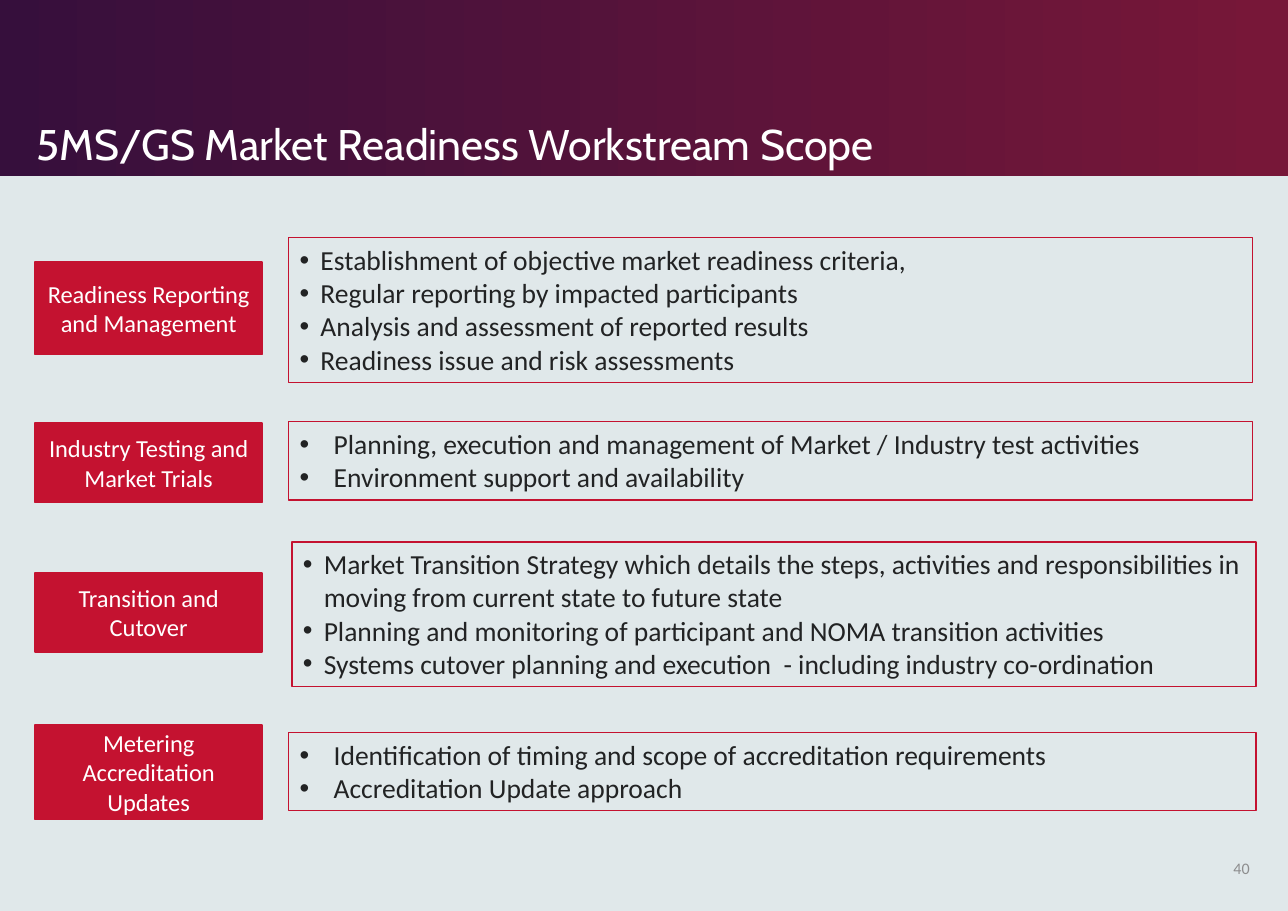
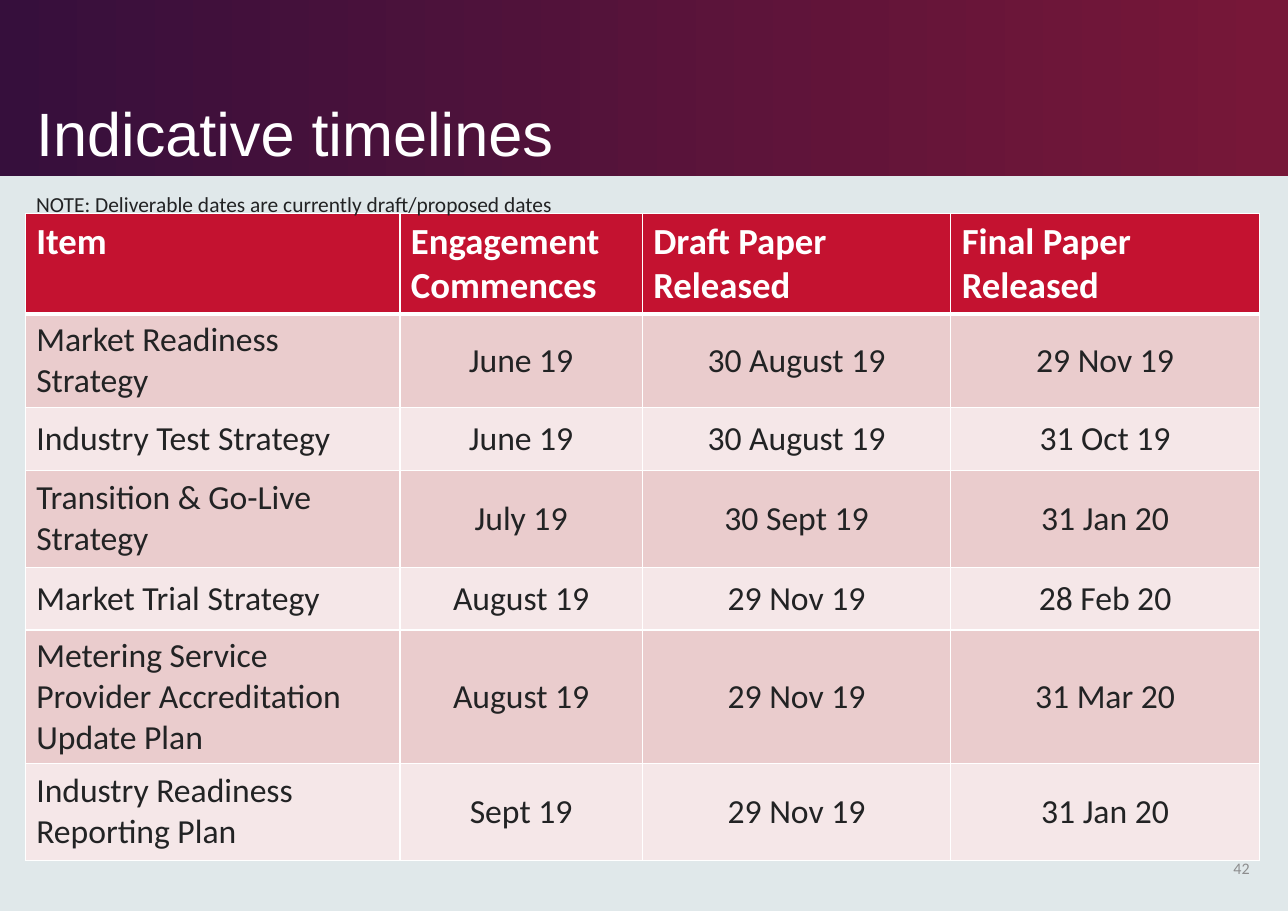
from lxml import etree
from pptx import Presentation
from pptx.dml.color import RGBColor
from pptx.enum.shapes import MSO_SHAPE
from pptx.enum.text import MSO_ANCHOR, PP_ALIGN
from pptx.oxml.ns import qn
from pptx.util import Inches, Pt

RECTANGLE = MSO_SHAPE.RECTANGLE
TOP, MIDDLE, BOTTOM = MSO_ANCHOR.TOP, MSO_ANCHOR.MIDDLE, MSO_ANCHOR.BOTTOM
LEFT, CENTER, RIGHT = PP_ALIGN.LEFT, PP_ALIGN.CENTER, PP_ALIGN.RIGHT

COLORS = {
    "page": "E0E8EA",
    "band_start": "360F3C",
    "band_end": "771738",
    "red": "C41230",
    "ink": "222324",
    "white": "FFFFFF",
    "number": "8D8D8E",
    "row_dark": "EACCCD",
    "row_light": "F5E7E8",
}
BODY_FONT = "Calibri"
SLIDE_W, SLIDE_H = 11.69, 8.27
BAND_H = 1.6

LABEL_LEFT, LABEL_W = 0.32, 2.06
NARROW_INDENT, WIDE_INDENT = 0.19, 0.31
WORKSTREAMS = [
    ("Readiness Reporting and Management", (2.38, 0.84),
     (2.62, 2.16, 8.75, 1.31), NARROW_INDENT,
     ["Establishment of objective market readiness criteria,",
      "Regular reporting by impacted participants",
      "Analysis and assessment of reported results",
      "Readiness issue and risk assessments"]),
    ("Industry Testing and Market Trials", (3.84, 0.72),
     (2.62, 3.83, 8.75, 0.71), WIDE_INDENT,
     ["Planning, execution and management of Market / Industry test activities",
      "Environment support and availability"]),
    ("Transition and Cutover", (5.2, 0.72),
     (2.65, 4.92, 8.75, 1.31), NARROW_INDENT,
     ["Market Transition Strategy which details the steps, activities and "
      "responsibilities in moving from current state to future state",
      "Planning and monitoring of participant and NOMA transition activities",
      "Systems cutover planning and execution  - including industry co-ordination"]),
    ("Metering Accreditation Updates", (6.58, 0.86),
     (2.62, 6.65, 8.78, 0.71), WIDE_INDENT,
     ["Identification of timing and scope of accreditation requirements",
      "Accreditation Update approach"]),
]

COLUMN_WIDTHS = [3.4, 2.2, 2.8, 2.8]
ROW_HEIGHTS = [0.91, 0.85, 0.57, 0.88, 0.57, 1.21, 0.88]
TIMELINE = [
    ["Item", "Engagement Commences", "Draft Paper Released", "Final Paper Released"],
    ["Market Readiness Strategy", "June 19", "30 August 19", "29 Nov 19"],
    ["Industry Test Strategy", "June 19", "30 August 19", "31 Oct 19"],
    ["Transition & Go-Live Strategy", "July 19", "30 Sept 19", "31 Jan 20"],
    ["Market Trial Strategy", "August 19", "29 Nov 19", "28 Feb 20"],
    ["Metering Service Provider Accreditation Update Plan",
     "August 19", "29 Nov 19", "31 Mar 20"],
    ["Industry Readiness Reporting Plan", "Sept 19", "29 Nov 19", "31 Jan 20"],
]


def rgb(name):
    """Return the named colour."""
    return RGBColor.from_string(COLORS[name])


def add_bullet(paragraph, indent):
    """Give a paragraph a round bullet with a hanging indent."""
    properties = paragraph._p.get_or_add_pPr()
    properties.set("marL", str(Inches(indent)))
    properties.set("indent", str(-Inches(indent)))
    etree.SubElement(properties, qn("a:buFont")).set("typeface", "Arial")
    etree.SubElement(properties, qn("a:buChar")).set("char", "•")


def write(frame, lines, size, color, font=BODY_FONT, align=LEFT, bold=False,
          indent=None, spacing=None):
    """Write one paragraph per line in a single style."""
    for index, line in enumerate(lines):
        paragraph = frame.add_paragraph() if index else frame.paragraphs[0]
        paragraph.text = line
        paragraph.alignment = align
        if indent:
            add_bullet(paragraph, indent)
        if spacing:
            paragraph.line_spacing = spacing
        paragraph.font.name = font
        paragraph.font.size = Pt(size)
        paragraph.font.bold = bold
        paragraph.font.color.rgb = rgb(color)


def add_text(slide, box, line, size, color, anchor=TOP, **style):
    """Add a wrapped text box."""
    frame = slide.shapes.add_textbox(*map(Inches, box)).text_frame
    frame.word_wrap = True
    frame.vertical_anchor = anchor
    write(frame, [line], size, color, **style)


def add_panel(slide, box, line_width, fill=None, anchor=TOP):
    """Add a red-outlined rectangle and return its text frame."""
    panel = slide.shapes.add_shape(RECTANGLE, *map(Inches, box))
    panel.shadow.inherit = False
    if fill:
        panel.fill.solid()
        panel.fill.fore_color.rgb = rgb(fill)
    else:
        panel.fill.background()
    panel.line.color.rgb = rgb("red")
    panel.line.width = Pt(line_width)
    panel.text_frame.word_wrap = True
    panel.text_frame.vertical_anchor = anchor
    return panel.text_frame


def add_base_slide(prs, title, number, title_font, title_size):
    """Add a slide with the gradient band, title and page number."""
    slide = prs.slides.add_slide(prs.slide_layouts[6])
    slide.background.fill.solid()
    slide.background.fill.fore_color.rgb = rgb("page")
    band = slide.shapes.add_shape(RECTANGLE, 0, 0, Inches(SLIDE_W), Inches(BAND_H))
    band.shadow.inherit = False
    band.line.fill.background()
    band.fill.gradient()
    band.fill.gradient_angle = 0
    stops = [(0, "band_start"), (0.99, "band_end")]
    for stop, (position, color) in zip(band.fill.gradient_stops, stops):
        stop.position = position
        stop.color.rgb = rgb(color)
    add_text(slide, (0.23, 0.16, 11.12, 1.43), title, title_size, "white",
             BOTTOM, font=title_font, spacing=0.9)
    add_text(slide, (10.89, 7.66, 0.55, 0.44), number, 10.5, "number",
             MIDDLE, align=RIGHT)
    return slide


def add_workstream(slide, label, label_span, scope_box, indent, scope):
    """Add a red label and its outlined list of scope items."""
    label_top, label_height = label_span
    label_box = (LABEL_LEFT, label_top, LABEL_W, label_height)
    write(add_panel(slide, label_box, 1, "red", MIDDLE), [label], 16, "white",
          align=CENTER)
    write(add_panel(slide, scope_box, 0.75), scope, 18, "ink", indent=indent)


def set_borders(cell, top, bottom):
    """Draw white borders around a cell, widths in points."""
    properties = cell._tc.get_or_add_tcPr()
    for side, width in (("L", 1), ("R", 1), ("T", top), ("B", bottom)):
        border = etree.SubElement(properties, qn(f"a:ln{side}"), w=str(Pt(width)))
        fill = etree.SubElement(border, qn("a:solidFill"))
        etree.SubElement(fill, qn("a:srgbClr"), val=COLORS["white"])


def add_timeline(slide, left, top):
    """Add the deliverables table with its banded rows."""
    size = (sum(COLUMN_WIDTHS), sum(ROW_HEIGHTS))
    table = slide.shapes.add_table(len(ROW_HEIGHTS), len(COLUMN_WIDTHS),
                                   *map(Inches, (left, top, *size))).table
    for column, width in zip(table.columns, COLUMN_WIDTHS):
        column.width = Inches(width)
    for r, (row, height) in enumerate(zip(TIMELINE, ROW_HEIGHTS)):
        table.rows[r].height = Inches(height)
        header = r == 0
        shade = "red" if header else "row_dark" if r % 2 else "row_light"
        for c, value in enumerate(row):
            cell = table.cell(r, c)
            set_borders(cell, 3 if r == 1 else 1, 3 if header else 1)
            cell.fill.solid()
            cell.fill.fore_color.rgb = rgb(shade)
            cell.vertical_anchor = TOP if header else MIDDLE
            write(cell.text_frame, [value], 24 if header else 22,
                  "white" if header else "ink", bold=header,
                  align=LEFT if header or c == 0 else CENTER)


def build_scope_slide(prs):
    """Build the slide of workstreams and their scope."""
    slide = add_base_slide(prs, "5MS/GS Market Readiness Workstream Scope", "40",
                           "Cabin", 28)
    for workstream in WORKSTREAMS:
        add_workstream(slide, *workstream)


def build_timeline_slide(prs):
    """Build the slide of deliverable dates."""
    slide = add_base_slide(prs, "Indicative timelines", "42", "Arial", 40)
    add_timeline(slide, 0.23, 1.94)
    add_text(slide, (0.23, 1.69, 5.74, 0.34),
             "NOTE: Deliverable dates are currently draft/proposed dates", 14, "ink")


def main():
    """Build and save the presentation."""
    prs = Presentation()
    prs.slide_width, prs.slide_height = Inches(SLIDE_W), Inches(SLIDE_H)
    build_scope_slide(prs)
    build_timeline_slide(prs)
    prs.save("out.pptx")


if __name__ == "__main__":
    main()
